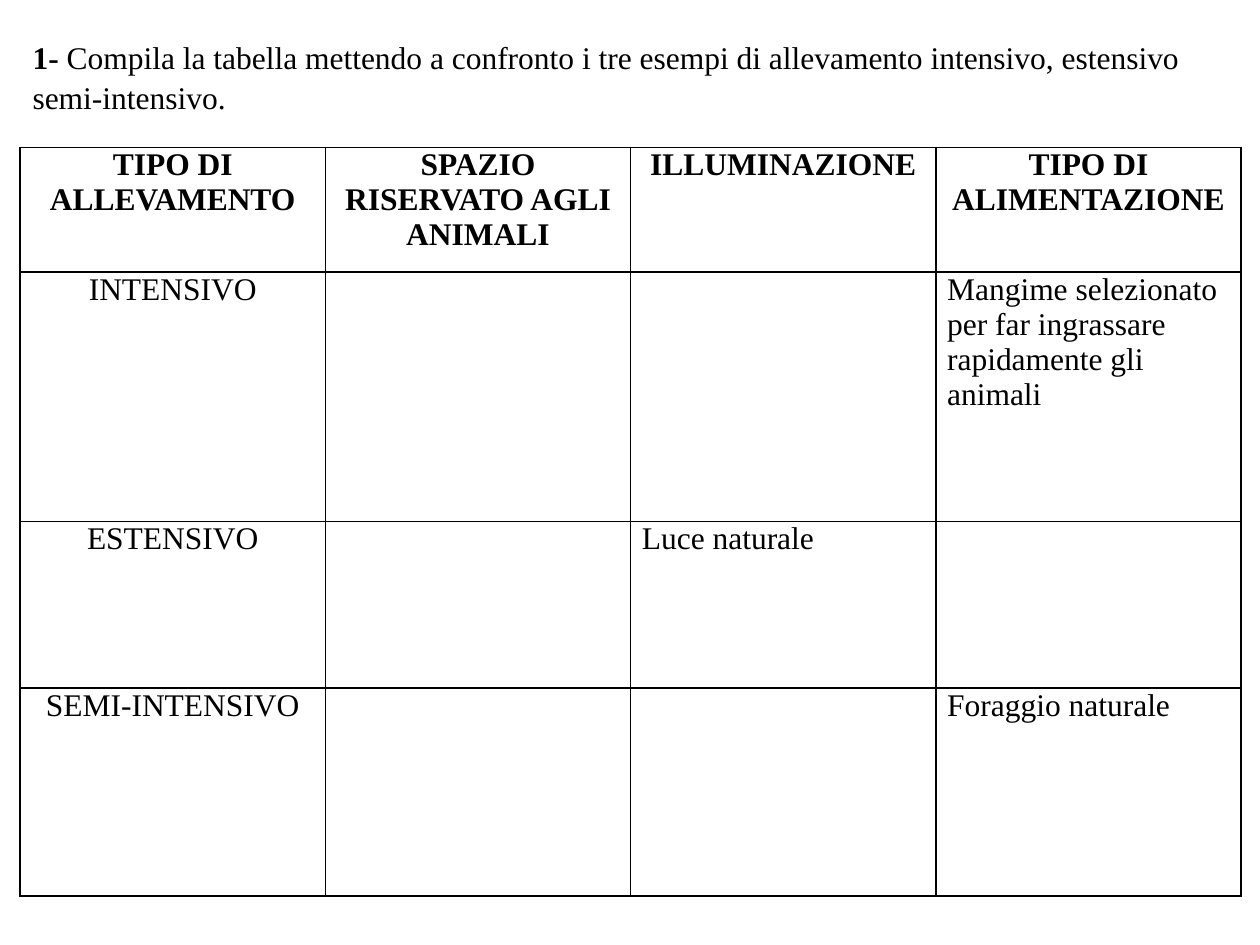
from dataclasses import dataclass

from lxml.etree import SubElement
from pptx import Presentation
from pptx.dml.color import RGBColor
from pptx.enum.text import MSO_AUTO_SIZE, PP_ALIGN
from pptx.oxml.ns import qn
from pptx.slide import Slide
from pptx.util import Inches, Pt

HEADERS = [
    "TIPO DI ALLEVAMENTO",
    "SPAZIO RISERVATO AGLI ANIMALI",
    "ILLUMINAZIONE",
    "TIPO DI ALIMENTAZIONE",
]
FARMING_ROWS = [
    ["INTENSIVO", "", "", "Mangime selezionato per far ingrassare rapidamente gli animali"],
    ["ESTENSIVO", "", "Luce naturale", ""],
    ["SEMI-INTENSIVO", "", "", "Foraggio naturale"],
]
ROW_HEIGHTS = [0.99, 1.98, 1.32, 1.65]


def color(hex_code):
    """Return the colour for a hex string."""
    return RGBColor.from_string(hex_code)


@dataclass
class Worksheet:
    """Hold the style and the current slide of the worksheet."""

    slide: Slide
    font_name: str = "Times New Roman"
    font_size: int = 18
    ink: str = "000000"
    paper: str = "FFFFFF"

    def style(self, paragraph, line_spacing):
        """Apply the worksheet font and a line spacing to a paragraph."""
        paragraph.line_spacing = line_spacing
        font = paragraph.font
        font.name = self.font_name
        font.size = Pt(self.font_size)
        font.color.rgb = color(self.ink)

    def add_instruction(self, number, text, left, top, width, height):
        """Add the exercise instruction after its bold number."""
        shape = self.slide.shapes.add_textbox(
            Inches(left), Inches(top), Inches(width), Inches(height)
        )
        frame = shape.text_frame
        frame.word_wrap = True
        frame.auto_size = MSO_AUTO_SIZE.SHAPE_TO_FIT_TEXT
        paragraph = frame.paragraphs[0]
        self.style(paragraph, 1.07)
        number_run = paragraph.add_run()
        number_run.text = number
        number_run.font.bold = True
        paragraph.add_run().text = text

    def add_border(self, cell):
        """Draw a one-point line on each side of a cell."""
        properties = cell._tc.get_or_add_tcPr()
        for index, side in enumerate(("a:lnL", "a:lnR", "a:lnT", "a:lnB")):
            line = properties.makeelement(qn(side), {"w": str(Pt(1))})
            fill = SubElement(line, qn("a:solidFill"))
            SubElement(fill, qn("a:srgbClr"), val=self.ink)
            properties.insert(index, line)

    def fill_cell(self, cell, text, bold, centered):
        """Write and format one table cell."""
        cell.fill.solid()
        cell.fill.fore_color.rgb = color(self.paper)
        cell.margin_left = cell.margin_right = Inches(0.09)
        cell.margin_top = cell.margin_bottom = 0
        cell.text = text
        paragraph = cell.text_frame.paragraphs[0]
        self.style(paragraph, Pt(20))
        paragraph.font.bold = bold
        paragraph.alignment = PP_ALIGN.CENTER if centered else PP_ALIGN.LEFT
        self.add_border(cell)

    def add_table(self, rows, row_heights, left, top, width):
        """Add a bordered table with equal columns and a bold header row."""
        column_count = len(rows[0])
        table = self.slide.shapes.add_table(
            len(rows), column_count,
            Inches(left), Inches(top), Inches(width), Inches(sum(row_heights)),
        ).table
        table.horz_banding = False
        for column in table.columns:
            column.width = Inches(width / column_count)
        for row_index, (texts, height) in enumerate(zip(rows, row_heights)):
            table.rows[row_index].height = Inches(height)
            is_header = row_index == 0
            for column_index, text in enumerate(texts):
                self.fill_cell(
                    table.cell(row_index, column_index), text,
                    bold=is_header, centered=is_header or column_index == 0,
                )


def main():
    """Build and save the farming comparison worksheet."""
    presentation = Presentation()
    presentation.slide_width = Inches(10)
    presentation.slide_height = Inches(7.5)
    worksheet = Worksheet(presentation.slides.add_slide(presentation.slide_layouts[6]))
    worksheet.add_instruction(
        "1- ",
        "Compila la tabella mettendo a confronto i tre esempi di allevamento "
        "intensivo, estensivo semi-intensivo.",
        0.16, 0.23, 9.61, 0.71,
    )
    worksheet.add_table([HEADERS, *FARMING_ROWS], ROW_HEIGHTS, 0.16, 1.17, 9.69)
    presentation.save("out.pptx")


if __name__ == "__main__":
    main()
